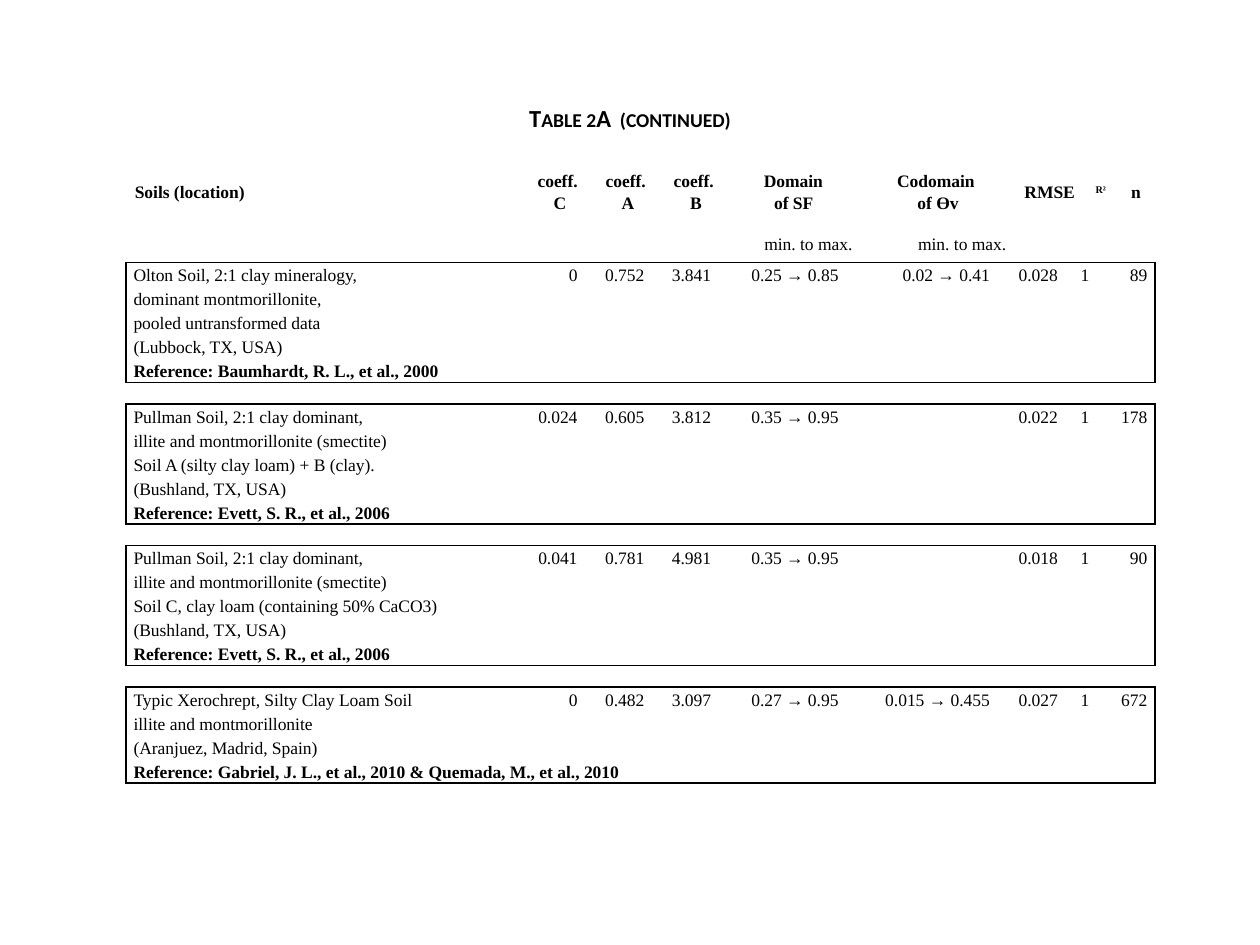
from pptx import Presentation
from pptx.util import Inches, Pt
from pptx.dml.color import RGBColor as RGB
from pptx.enum.text import PP_ALIGN as AL, MSO_ANCHOR as ANC
from pptx.oxml.ns import qn
from lxml.etree import SubElement as Sub

HUE = {"ink": "000000"}
UNIT = Inches(0.25)  # the slide is a grid of 40 by 30 units
SERIF, SANS = "Times New Roman", "Calibri"
PLAIN = "{2D5ABB26-0587-4C30-8999-92F81FD0307C}"  # table style without grid

HEADS = ["Soils (location)", "coeff. \nC", "coeff. \nA", "coeff. \nB",
         "Domain \nof SF ", "Codomain \nof Ɵv", "RMSE", "R²", "n"]
RANGE = "min. to max."

# Each soil: lines of text, values, columns spanned by the reference
SOILS = [
    (["Olton Soil, 2:1 clay mineralogy,", "dominant montmorillonite,",
      "pooled untransformed data", "(Lubbock, TX, USA)",
      "Reference: Baumhardt, R. L., et al., 2000"],
     ["0", "0.752", "3.841", "0.25 → 0.85", "0.02 → 0.41", "0.028", "1", "89"], 2),
    (["Pullman Soil, 2:1 clay dominant,", "illite and montmorillonite (smectite)",
      "Soil A (silty clay loam) + B (clay).", "(Bushland, TX, USA)",
      "Reference: Evett, S. R., et al., 2006"],
     ["0.024", "0.605", "3.812", "0.35 → 0.95", "", "0.022", "1", "178"], 1),
    (["Pullman Soil, 2:1 clay dominant,", "illite and montmorillonite (smectite)",
      "Soil C, clay loam (containing 50% CaCO3)", "(Bushland, TX, USA)",
      "Reference: Evett, S. R., et al., 2006"],
     ["0.041", "0.781", "4.981", "0.35 → 0.95", "", "0.018", "1", "90"], 1),
    (["Typic Xerochrept, Silty Clay Loam Soil", "illite and montmorillonite",
      "(Aranjuez, Madrid, Spain)",
      "Reference: Gabriel, J. L., et al., 2010 & Quemada, M., et al., 2010"],
     ["0", "0.482", "3.097", "0.27 → 0.95", "0.015 → 0.455", "0.027", "1", "672"], 5),
]


def grid(slide, box, cols, rows):
    """Add a plain table whose columns and rows share the box by weight."""
    x, y, w, h = (round(n * UNIT) for n in box)
    frame = slide.shapes.add_table(len(rows), len(cols), x, y, w, h)
    table = frame.table
    table.first_row = table.horz_banding = False
    frame._element.graphic.graphicData.tbl.tblPr[0].text = PLAIN
    for col, part in zip(table.columns, cols):
        col.width = round(w * part / sum(cols))
    for row, part in zip(table.rows, rows):
        row.height = round(h * part / sum(rows))
    return table


def edge(cell, sides):
    """Draw black borders on the named sides, none on the others."""
    props = cell._tc.get_or_add_tcPr()
    for side in "LRTB":
        line = Sub(props, qn("a:ln" + side), w=str(Pt(1)))
        if side in sides:
            fill = Sub(line, qn("a:solidFill"))
            Sub(fill, qn("a:srgbClr"), val=HUE["ink"])
        else:
            Sub(line, qn("a:noFill"))
    cell.fill.background()


def put(cell, text="", sides="", pad=0.07, align=AL.LEFT, bold=False,
        size=10, face=SERIF):
    """Fill one cell with text and borders."""
    edge(cell, sides)
    cell.vertical_anchor = ANC.MIDDLE
    cell.margin_left = cell.margin_right = Inches(pad)
    cell.margin_top = cell.margin_bottom = 0
    para = cell.text_frame.paragraphs[0]
    para.alignment = align
    font = para.font
    font.size, font.name, font.bold = Pt(size), face, bold
    font.color.rgb = RGB.from_string(HUE["ink"])
    if text:
        para.text = text
        para.line_spacing = 1.15
    else:  # keeps an empty row low
        Sub(para._p, qn("a:endParaRPr"), sz=str(size * 100))
    return para


def title(slide, box):
    table = grid(slide, box, [1], [0.36, 0.27])
    para = put(table.cell(0, 0), "Table 2A  (continued)", align=AL.CENTER,
               bold=True, size=14, face=SANS)
    para.runs[0].font._element.set("cap", "small")
    put(table.cell(1, 0))


def header(slide, box):
    cols = [3.17, 0.54, 0.54, 0.54, 1.04, 1.22, 0.55, 0.26, 0.3]
    table = grid(slide, box, cols, [0.53, 0.3])
    for c, head in enumerate(HEADS):
        para = put(table.cell(0, c), head, bold=True,
                   align=AL.CENTER if c else AL.LEFT)
        if head == "R²":
            para.runs[0].font._element.set("baseline", "30000")
        put(table.cell(1, c), RANGE if c in (4, 5) else "", "B", align=AL.RIGHT)


def soils(slide, box):
    cols = [3.11, 0.53, 0.53, 0.53, 1.01, 1.2, 0.54, 0.25, 0.46]
    last = len(cols) - 1
    rows = []
    for lines, _, _ in SOILS:
        rows += [0.17] * bool(rows) + [0.19] * len(lines)
    table = grid(slide, box, cols, rows)
    top = 0
    for lines, values, span in SOILS:
        if top:  # gap between two framed soils
            for c in range(last + 1):
                put(table.cell(top, c), sides="TB")
            top += 1
        end = len(lines) - 1
        for r, line in enumerate(lines):
            texts = [line] + (values if r == 0 else [""] * last)
            for c, text in enumerate(texts):
                sides = ("L" * (c == 0) + "R" * (c == last)
                         + "T" * (r == 0) + "B" * (r == end))
                put(table.cell(top + r, c), text, sides, pad=0.06,
                    align=AL.RIGHT if c else AL.LEFT,
                    bold=r == end and c == 0)
        if span > 1:
            table.cell(top + end, 0).merge(table.cell(top + end, span - 1))
        top += len(lines)


def main():
    deck = Presentation()
    deck.slide_width, deck.slide_height = 40 * UNIT, 30 * UNIT
    slide = deck.slides.add_slide(deck.slide_layouts[6])
    title(slide, (4, 3, 32, 2.52))
    soils(slide, (4, 8.33, 32.67, 16.55))
    header(slide, (4, 5, 32.67, 3.33))
    deck.save("out.pptx")


if __name__ == "__main__":
    main()
